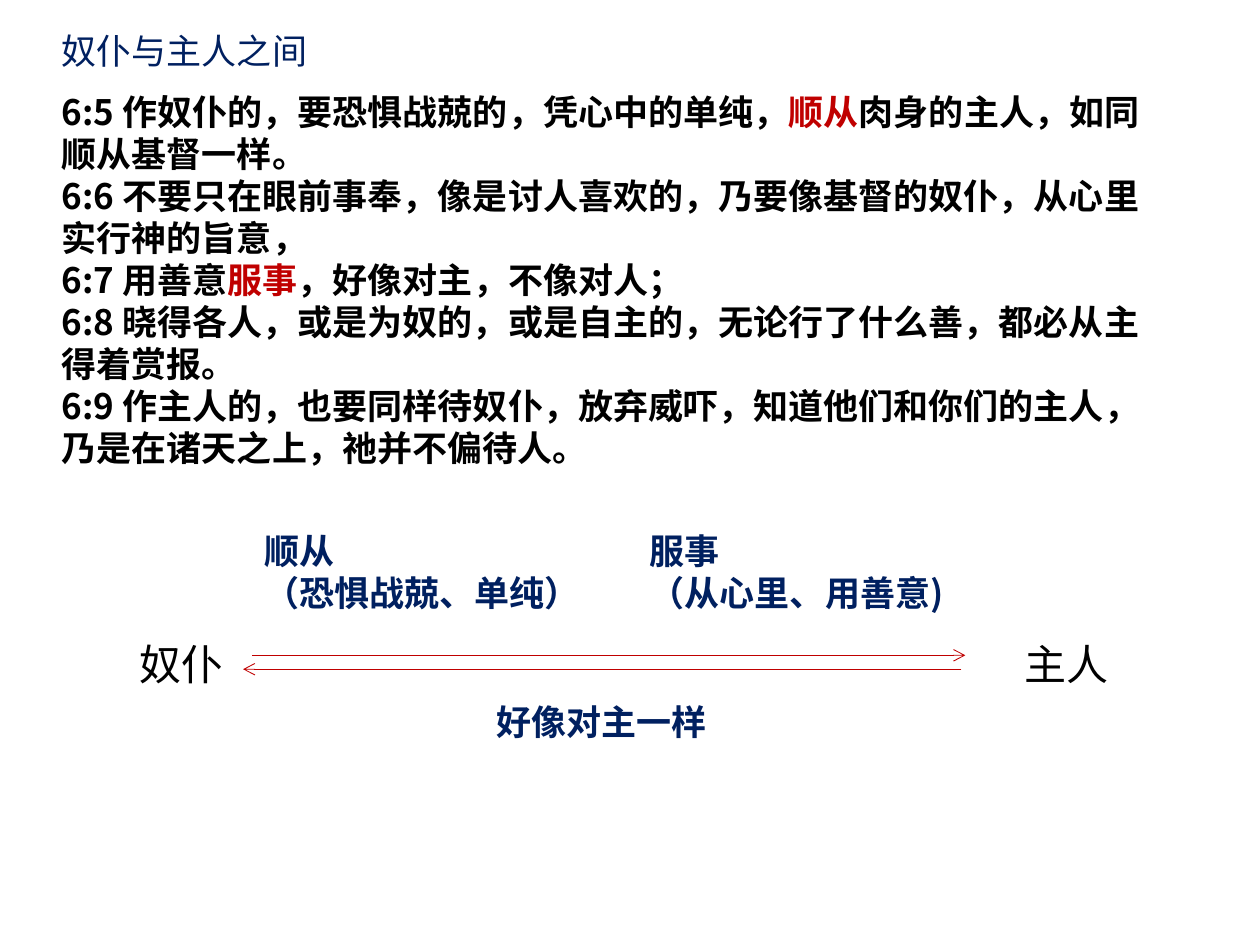
from lxml import etree
from pptx import Presentation
from pptx import util as u
from pptx.dml.color import RGBColor
from pptx.enum import shapes, text
from pptx.oxml import ns

COLORS = {"navy": "002060", "black": "000000", "red": "C00000"}
CJK = "Noto Sans CJK SC"

# Content: verses are lists of (text, colour) spans
TITLE = "奴仆与主人之间"
VERSES = [
    [("6:5 作奴仆的，要恐惧战兢的，凭心中的单纯，", "black"), ("顺从", "red"),
     ("肉身的主人，如同顺从基督一样。", "black")],
    [("6:6 不要只在眼前事奉，像是讨人喜欢的，乃要像基督的奴仆，从心里实行神的旨意，", "black")],
    [("6:7 用善意", "black"), ("服事", "red"), ("，好像对主，不像对人；", "black")],
    [("6:8 晓得各人，或是为奴的，或是自主的，无论行了什么善，都必从主得着赏报。", "black")],
    [("6:9 作主人的，也要同样待奴仆，放弃威吓，知道他们和你们的主人，"
      "乃是在诸天之上，祂并不偏待人。", "black")],
]

# Diagram, in cm: lines, (left, top, width, height), size, colour, bold, wrap, font
LABELS = [
    (["奴仆"], (2.57, 12.73, 2.21, 1.27), 24, "black", False, False, CJK),
    (["主人"], (20.4, 12.73, 2.21, 1.27), 24, "black", False, False, CJK),
    (["顺从", "（恐惧战兢、单纯）"], (5.08, 10.54, 6.88, 1.96), 20, "navy", True, False, CJK),
    (["服事", "（从心里、用善意)"], (12.85, 10.54, 6.53, 1.96), 20, "navy", True, True, CJK),
    (["好像对主一样"], (9.75, 14, 4.78, 1.12), 20, "navy", True, False, "Calibri"),
]
ARROWS = [(5.08, 19.46, 13.21), (19.38, 4.9, 13.49)]  # start x, end x, y


def place(shape, left, top, width, height):
    shape.left, shape.top = u.Cm(left), u.Cm(top)
    shape.width, shape.height = u.Cm(width), u.Cm(height)


def style_frame(frame, wrap):
    frame.word_wrap = wrap
    frame.auto_size = text.MSO_AUTO_SIZE.NONE
    frame.vertical_anchor = text.MSO_ANCHOR.TOP


def style_para(para):
    para.alignment = text.PP_ALIGN.LEFT
    para.line_spacing = u.Pt(24 if para.runs[0].font.size == u.Pt(20) else 29)
    para.space_before = para.space_after = u.Pt(0)


def style_span(span, size, color, bold=False, font=CJK):
    span.font.size, span.font.bold, span.font.name = u.Pt(size), bold, font
    span.font.color.rgb = RGBColor.from_string(COLORS[color])
    east_asian = etree.Element(ns.qn("a:ea"), typeface=CJK)
    span.font._element.find(ns.qn("a:latin")).addnext(east_asian)


def add_arrow(page, start, end, y):
    arrow = page.shapes.add_connector(
        shapes.MSO_CONNECTOR.STRAIGHT, u.Cm(start), u.Cm(y), u.Cm(end), u.Cm(y))
    arrow.line.color.rgb = RGBColor.from_string(COLORS["red"])
    arrow.line.width = u.Pt(0.5)
    etree.SubElement(arrow.line._get_or_add_ln(), ns.qn("a:tailEnd"), type="arrow")
    etree.SubElement(arrow._element.spPr, ns.qn("a:effectLst"))


def main():
    deck = Presentation()
    deck.slide_width, deck.slide_height = u.Cm(25.4), u.Cm(19.05)
    page = deck.slides.add_slide(deck.slide_layouts[1])

    # Title
    title = page.shapes.title
    place(title, 0.99, 0.46, 7.06, 1.12)
    style_frame(title.text_frame, True)
    title.text_frame.text = TITLE
    style_span(title.text_frame.paragraphs[0].runs[0], 20, "navy")
    style_para(title.text_frame.paragraphs[0])

    # Verses
    body = page.placeholders[1]
    place(body, 0.99, 1.7, 22.81, 7.95)
    frame = body.text_frame
    style_frame(frame, True)
    frame.text = "\n".join([""] * len(VERSES))
    for para, verse in zip(frame.paragraphs, VERSES):
        for words, color in verse:
            span = para.add_run()
            span.text = words
            style_span(span, 20, color, bold=True)
        style_para(para)
        props = para._p.get_or_add_pPr()
        props.set("marL", "0")
        props.set("indent", "0")
        etree.SubElement(props, ns.qn("a:buNone"))

    # Diagram labels and arrows
    for lines, area, size, color, bold, wrap, font in LABELS:
        box = page.shapes.add_textbox(*map(u.Cm, area))
        style_frame(box.text_frame, wrap)
        box.text_frame.text = "\n".join(lines)
        for para in box.text_frame.paragraphs:
            style_span(para.runs[0], size, color, bold, font)
            style_para(para)
    for start, end, y in ARROWS:
        add_arrow(page, start, end, y)

    deck.save("out.pptx")


if __name__ == "__main__":
    main()
